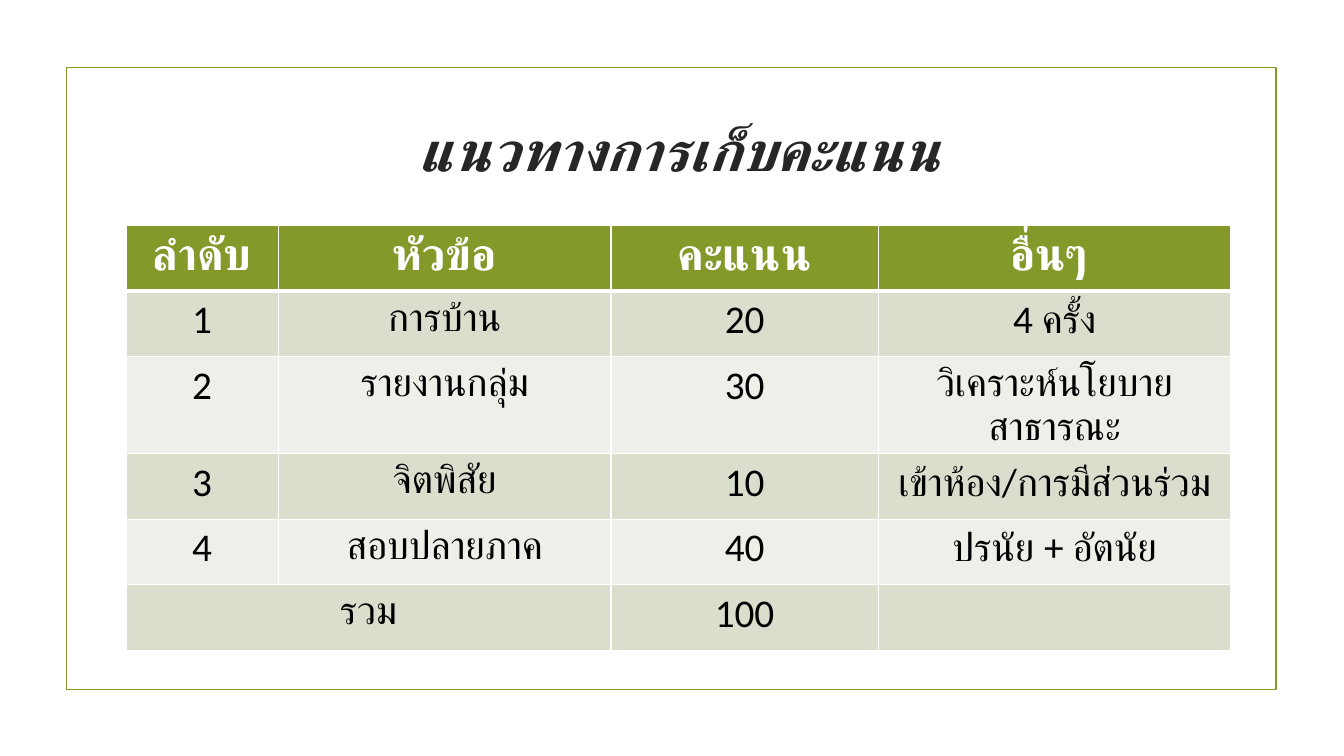
from lxml import etree
from pptx import Presentation
from pptx.dml.color import RGBColor
from pptx.enum.shapes import MSO_SHAPE
from pptx.enum.text import MSO_ANCHOR, PP_ALIGN
from pptx.oxml.ns import qn
from pptx.util import Inches, Pt

RECTANGLE = MSO_SHAPE.RECTANGLE
CENTER = PP_ALIGN.CENTER
MIDDLE = MSO_ANCHOR.MIDDLE
TITLE_ONLY = 5

COLORS = {
    "green": "83992A",
    "band_dark": "D9DECD",
    "band_light": "EDEFE8",
    "white": "FFFFFF",
    "black": "000000",
    "title": "262626",
}
COLUMN_WIDTHS = [1.51, 3.3, 2.65, 3.5]
ROW_HEIGHTS = [0.65, 0.65, 0.56, 0.65, 0.65, 0.65]
SCORES = [
    ["ลำดับ", "หัวข้อ", "คะแนน", "อื่นๆ "],
    ["1", "การบ้าน", "20", "4 ครั้ง"],
    ["2", "รายงานกลุ่ม", "30", "วิเคราะห์นโยบายสาธารณะ"],
    ["3", "จิตพิสัย", "10", "เข้าห้อง/การมีส่วนร่วม"],
    ["4", "สอบปลายภาค", "40", "ปรนัย + อัตนัย"],
    ["รวม", "", "100", ""],
]


def rgb(name):
    """Return the named colour."""
    return RGBColor.from_string(COLORS[name])


def write_text(tf, text, size=28, color="black", font="Calibri", bold=False, italic=False):
    """Write one centred, formatted paragraph with a Thai typeface."""
    p = tf.paragraphs[0]
    p.alignment = CENTER
    r = p.add_run()
    r.text = text
    r.font.size = Pt(size)
    r.font.name = font
    r.font.bold = bold
    r.font.italic = italic
    r.font.color.rgb = rgb(color)
    cs = etree.SubElement(r.font._element, qn("a:cs"))
    cs.set("typeface", "Times New Roman")


def set_borders(cell, bottom=1):
    """Give a cell white borders, placed before its fill."""
    tc_pr = cell._tc.get_or_add_tcPr()
    widths = {"a:lnL": 1, "a:lnR": 1, "a:lnT": 1, "a:lnB": bottom}
    for i, (tag, width) in enumerate(widths.items()):
        ln = etree.Element(qn(tag), w=str(Pt(width)))
        fill = etree.SubElement(ln, qn("a:solidFill"))
        etree.SubElement(fill, qn("a:srgbClr"), val=COLORS["white"])
        tc_pr.insert(i, ln)


def add_frame(slide, left, top, width, height):
    """Draw the thin green frame."""
    sp = slide.shapes.add_shape(
        RECTANGLE, Inches(left), Inches(top), Inches(width), Inches(height))
    sp.shadow.inherit = False
    sp.fill.background()
    sp.line.color.rgb = rgb("green")
    sp.line.width = Pt(1.25)


def add_title(slide, left, top, width, height):
    """Place and format the title placeholder."""
    sp = slide.shapes.title
    sp.left, sp.top = Inches(left), Inches(top)
    sp.width, sp.height = Inches(width), Inches(height)
    sp.text_frame.vertical_anchor = MIDDLE
    write_text(sp.text_frame, " แนวทางการเก็บคะแนน", size=39.6, color="title",
               font="Times New Roman", bold=True, italic=True)


def add_score_table(slide, left, top, width, height):
    """Build the banded score table with a merged total label."""
    table = slide.shapes.add_table(
        len(SCORES), len(COLUMN_WIDTHS),
        Inches(left), Inches(top), Inches(width), Inches(height)).table
    for column, share in zip(table.columns, COLUMN_WIDTHS):
        column.width = Inches(width * share / sum(COLUMN_WIDTHS))
    for row, share in zip(table.rows, ROW_HEIGHTS):
        row.height = Inches(height * share / sum(ROW_HEIGHTS))
    for i, values in enumerate(SCORES):
        header = i == 0
        band = "green" if header else "band_dark" if i % 2 else "band_light"
        for j, text in enumerate(values):
            cell = table.cell(i, j)
            cell.fill.solid()
            cell.fill.fore_color.rgb = rgb(band)
            set_borders(cell, bottom=3 if header else 1)
            if text:
                write_text(cell.text_frame, text, size=32 if header else 28,
                           color="white" if header else "black", bold=header)
    last = len(SCORES) - 1
    table.cell(last, 0).merge(table.cell(last, 1))


def main():
    """Build and save the scoring slide."""
    prs = Presentation()
    prs.slide_width, prs.slide_height = Inches(13.33), Inches(7.5)
    slide = prs.slides.add_slide(prs.slide_layouts[TITLE_ONLY])
    add_frame(slide, 0.66, 0.67, 12, 6.17)
    add_title(slide, 1.42, 1.07, 10.5, 0.83)
    add_score_table(slide, 1.25, 2.24, 10.96, 3.81)
    prs.save("out.pptx")


if __name__ == "__main__":
    main()
